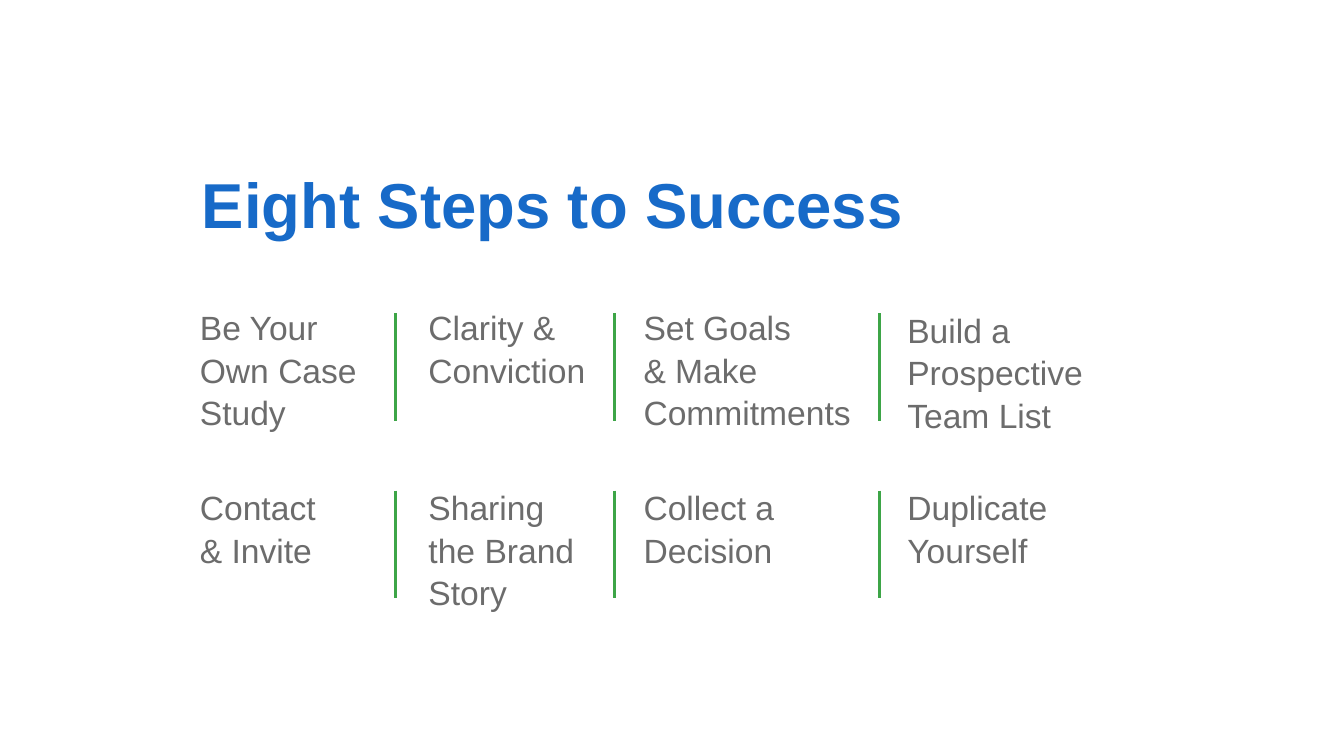
"""Build the Eight Steps to Success slide."""
from pptx import Presentation
from pptx.dml.color import RGBColor
from pptx.enum.shapes import MSO_CONNECTOR
from pptx.enum.text import MSO_ANCHOR, PP_ALIGN
from pptx.oxml.ns import qn
from pptx.util import Pt
from lxml.etree import SubElement


def color(code):
    return RGBColor.from_string(code)


def write(shape, text, size=18, ink="6C6C6C", bold=False, space=1.05, anchor=MSO_ANCHOR.TOP):
    frame = shape.text_frame
    frame.word_wrap = True
    frame.vertical_anchor = anchor
    para = frame.paragraphs[0]
    para.text = text
    para.alignment = PP_ALIGN.LEFT
    para.line_spacing = space
    para.space_before = Pt(0)
    font = para.font
    font.name, font.size, font.bold = "Arial", Pt(size), bold
    font.color.rgb = color(ink)


deck = Presentation()
deck.slide_width, deck.slide_height = Pt(720), Pt(405)
slide = deck.slides.add_slide(deck.slide_layouts[5])

title = slide.shapes.title
title.left, title.top, title.width, title.height = Pt(101), Pt(75), Pt(405), Pt(68)
write(title, "Eight Steps to Success", size=34, ink="176AC8", bold=True, space=1,
      anchor=MSO_ANCHOR.MIDDLE)

lefts = [100, 222.5, 337.7, 479]
widths = [107, 102, 130, 114.5]
rules = [211.7, 329, 471]
rows = [
    (160, 167.8, ["Be Your Own Case Study", "Clarity & Conviction",
                  "Set Goals\v& Make Commitments", "Build a Prospective Team List"]),
    (256.5, 262.8, ["Contact\v& Invite", "Sharing\vthe Brand Story",
                    "Collect a Decision", "Duplicate Yourself"]),
]

for top, start, steps in rows:
    for left, width, step in zip(lefts, widths, steps):
        drop = 1.4 if step.startswith("Build") else 0
        box = slide.shapes.add_textbox(Pt(left), Pt(top + drop), Pt(width), Pt(72))
        write(box, step)
    for x in rules:
        rule = slide.shapes.add_connector(
            MSO_CONNECTOR.STRAIGHT, Pt(x), Pt(start), Pt(x), Pt(start + 57.6))
        rule.line.color.rgb = color("3DA547")
        rule.line.width = Pt(1.5)
        SubElement(rule.element.spPr, qn("a:effectLst"))

deck.save("out.pptx")
